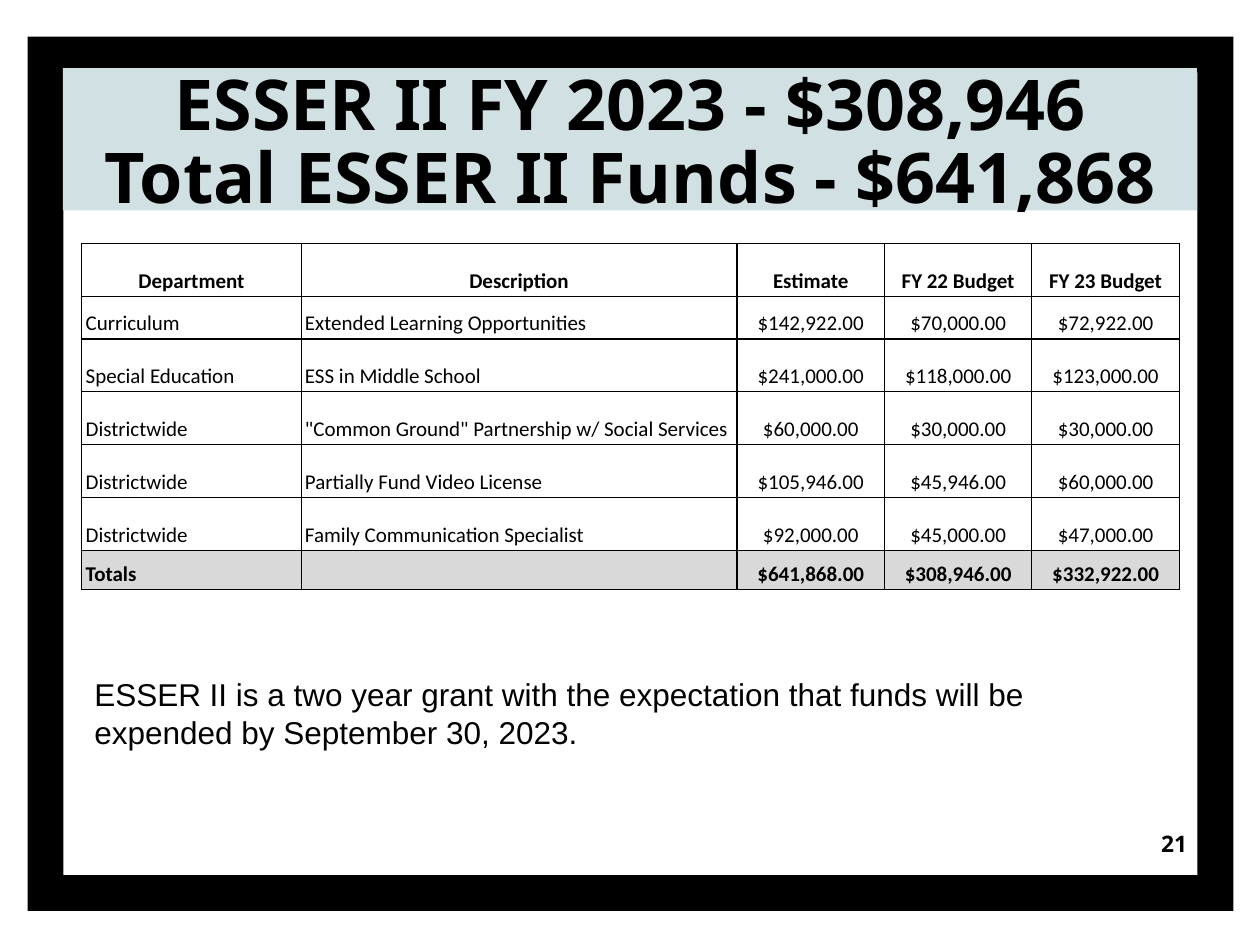
from typing import NamedTuple

from lxml import etree
from pptx import Presentation
from pptx import util as u
from pptx.dml.color import RGBColor
from pptx.enum import shapes, text
from pptx.oxml.ns import qn


class Box(NamedTuple):
    left: float
    top: float
    width: float
    height: float


class BudgetRow(NamedTuple):
    department: str
    description: str
    estimate: str
    fy22: str
    fy23: str


BLACK = "000000"
TITLE_FILL = "D0E0E3"
TOTAL_FILL = "D9D9D9"
CENTER = text.PP_ALIGN.CENTER
LEFT = text.PP_ALIGN.LEFT
RIGHT = text.PP_ALIGN.RIGHT
MIDDLE = text.MSO_ANCHOR.MIDDLE
TOP = text.MSO_ANCHOR.TOP

COLUMN_WIDTHS = [125.3, 249.1, 84.25, 84.25, 84.25]
ROW_HEIGHTS = [30.2, 24.5, 30.2, 30.2, 30.2, 30.2, 22.3]
ROWS = [
    BudgetRow("Department", "Description", "Estimate", "FY 22 Budget", "FY 23 Budget"),
    BudgetRow("Curriculum", "Extended Learning Opportunities",
              "$142,922.00", "$70,000.00", "$72,922.00"),
    BudgetRow("Special Education", "ESS in Middle School",
              "$241,000.00", "$118,000.00", "$123,000.00"),
    BudgetRow("Districtwide", '"Common Ground" Partnership w/ Social Services',
              "$60,000.00", "$30,000.00", "$30,000.00"),
    BudgetRow("Districtwide", "Partially Fund Video License",
              "$105,946.00", "$45,946.00", "$60,000.00"),
    BudgetRow("Districtwide", "Family Communication Specialist",
              "$92,000.00", "$45,000.00", "$47,000.00"),
    BudgetRow("Totals", "", "$641,868.00", "$308,946.00", "$332,922.00"),
]


def points(box: Box) -> list[u.Length]:
    return [u.Pt(length) for length in box]


def paint(fill, color: str) -> None:
    fill.solid()
    fill.fore_color.rgb = RGBColor.from_string(color)


def write(para, content: str, *, size: float, font: str, bold: bool = False,
          align=LEFT, spacing: float = 1.0) -> None:
    para.alignment = align
    para.line_spacing = spacing
    if not content:
        etree.SubElement(para._p, qn("a:endParaRPr"), sz=str(int(size * 100)))
        return
    span = para.add_run()
    span.text = content
    span.font.size = u.Pt(size)
    span.font.name = font
    span.font.bold = bold
    span.font.color.rgb = RGBColor.from_string(BLACK)


def add_text_box(page, box: Box, anchor, inset: float = 7.2):
    shape = page.shapes.add_textbox(*points(box))
    frame = shape.text_frame
    frame.word_wrap = True
    frame.vertical_anchor = anchor
    frame.margin_left = frame.margin_right = u.Pt(7.2)
    frame.margin_top = frame.margin_bottom = u.Pt(inset)
    return shape


def add_frame(page) -> None:
    frame = page.shapes.add_shape(shapes.MSO_SHAPE.FRAME,
                                  *points(Box(15.8, 20.9, 689, 499.7)))
    frame.adjustments[0] = 0.041
    frame.shadow.inherit = False
    paint(frame.fill, BLACK)
    frame.line.fill.background()


def add_title(page) -> None:
    title = add_text_box(page, Box(36, 38.9, 648, 81.4), MIDDLE, inset=3.6)
    paint(title.fill, TITLE_FILL)
    body = title.text_frame
    style = dict(size=40, font="Noto Sans", bold=True, align=CENTER)
    write(body.paragraphs[0], "ESSER II FY 2023 - $308,946", **style)
    write(body.add_paragraph(), "Total ESSER II Funds - $641,868", spacing=0.87, **style)


def add_borders(cell) -> None:
    properties = cell._tc.get_or_add_tcPr()
    for side in ("lnL", "lnR", "lnT", "lnB"):
        line = etree.SubElement(properties, qn(f"a:{side}"), w=str(u.Pt(0.75)))
        fill = etree.SubElement(line, qn("a:solidFill"))
        etree.SubElement(fill, qn("a:srgbClr"), val=BLACK)


def add_budget_table(page) -> None:
    box = Box(46.8, 139, sum(COLUMN_WIDTHS), sum(ROW_HEIGHTS))
    table = page.shapes.add_table(len(ROWS), len(COLUMN_WIDTHS), *points(box)).table
    table.horz_banding = False
    for column, width in zip(table.columns, COLUMN_WIDTHS):
        column.width = u.Pt(width)
    for table_row, height in zip(table.rows, ROW_HEIGHTS):
        table_row.height = u.Pt(height)
    last = len(ROWS) - 1
    for row, values in enumerate(ROWS):
        for column, content in enumerate(values):
            cell = table.cell(row, column)
            cell.vertical_anchor = text.MSO_ANCHOR.BOTTOM
            cell.margin_left = cell.margin_right = u.Pt(2.2)
            cell.margin_top = cell.margin_bottom = u.Pt(1.4)
            add_borders(cell)
            if row == last:
                paint(cell.fill, TOTAL_FILL)
            else:
                cell.fill.background()
            write(cell.text_frame.paragraphs[0], content, size=12, font="Calibri",
                  bold=row in (0, last), spacing=1.15,
                  align=CENTER if row == 0 or column > 1 else LEFT)


def main() -> None:
    deck = Presentation()
    deck.slide_width, deck.slide_height = u.Pt(720), u.Pt(540)
    page = deck.slides.add_slide(deck.slide_layouts[6])
    add_frame(page)
    number = add_text_box(page, Box(642.2, 461.5, 43.2, 41), MIDDLE)
    write(number.text_frame.paragraphs[0], "21", size=13, font="Noto Sans",
          bold=True, align=RIGHT)
    add_title(page)
    add_budget_table(page)
    note = add_text_box(page, Box(46.8, 378.7, 627.1, 58.3), TOP)
    write(note.text_frame.paragraphs[0],
          "ESSER II is a two year grant with the expectation that funds will be "
          "expended by September 30, 2023.", size=18, font="Arial")
    deck.save("out.pptx")


if __name__ == "__main__":
    main()
